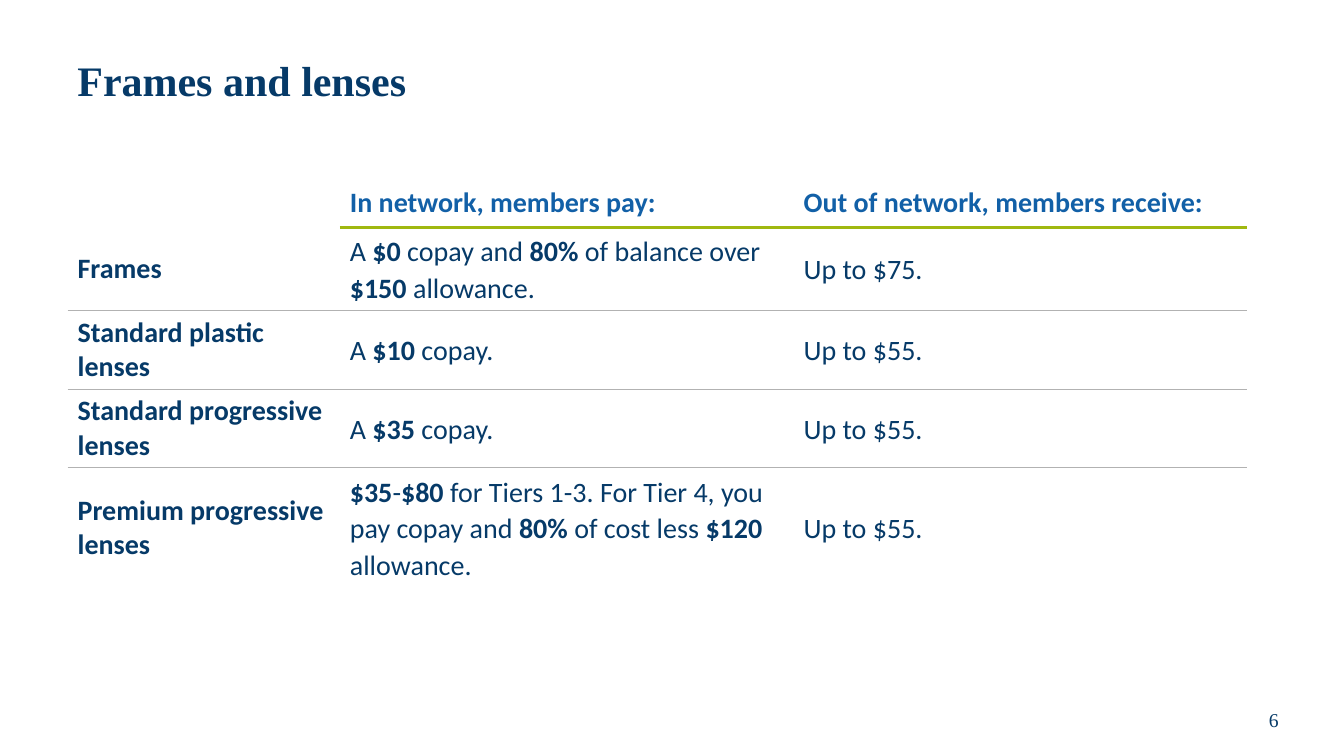
from lxml.etree import SubElement
from pptx import Presentation
from pptx.dml.color import RGBColor
from pptx.enum.text import MSO_ANCHOR, PP_ALIGN
from pptx.oxml.ns import qn
from pptx.util import Pt

PX = 9144
COLORS = {"navy": "063A68", "blue": "1260A7", "green": "A0B810", "gray": "B2B2B2"}
HEADER_RULE = ("green", 2.25)
ROW_RULE = ("gray", 0.5)
HEADERS = ["", "In network, members pay:", "Out of network, members receive:"]
BENEFITS = [
    ("Frames", "A **$0 **copay and **80%** of balance over **$150 **allowance.", "Up to $75."),
    ("Standard plastic lenses", "A **$10** copay.", "Up to $55."),
    ("Standard progressive lenses", "A **$35** copay.", "Up to $55."),
    ("Premium progressive lenses",
     "**$35**-**$80** for Tiers 1-3. For Tier 4, you pay copay and **80% **of cost less "
     "**$120 **allowance.", "Up to $55."),
]
COLUMN_WIDTHS = [270, 450, 450]
ROW_HEIGHTS = [50, 82, 78, 78, 120]


class SlideBuilder:
    """Adds styled text and tables to one slide, measured in px."""

    def __init__(self, deck):
        self.slide = deck.slides.add_slide(deck.slide_layouts[6])

    def style(self, paragraph, size, font, color, bold=None, spacing=None):
        paragraph.font.size = Pt(size)
        paragraph.font.name = font
        paragraph.font.color.rgb = RGBColor.from_string(COLORS[color])
        paragraph.font.bold = bold
        paragraph.line_spacing = spacing

    def text(self, left, top, width, height, content, size, align=PP_ALIGN.LEFT, **look):
        box = self.slide.shapes.add_textbox(*(v * PX for v in (left, top, width, height)))
        frame = box.text_frame
        frame.word_wrap = True
        frame.vertical_anchor = MSO_ANCHOR.MIDDLE
        paragraph = frame.paragraphs[0]
        paragraph.text = content
        paragraph.alignment = align
        self.style(paragraph, size, "Times New Roman", "navy", **look)

    def borders(self, cell, top, bottom):
        properties = cell._tc.get_or_add_tcPr()
        for tag, rule in (("lnL", None), ("lnR", None), ("lnT", top), ("lnB", bottom)):
            line = SubElement(properties, qn(f"a:{tag}"))
            if rule:
                color, points = rule
                line.set("w", str(Pt(points)))
                fill = SubElement(line, qn("a:solidFill"))
                SubElement(fill, qn("a:srgbClr"), val=COLORS[color])
            else:
                SubElement(line, qn("a:noFill"))

    def cell(self, cell, content, color, bold, spacing, top, bottom):
        self.borders(cell, top, bottom)
        cell.fill.background()
        cell.vertical_anchor = MSO_ANCHOR.MIDDLE
        paragraph = cell.text_frame.paragraphs[0]
        for index, part in enumerate(content.split("**")):
            if part:
                span = paragraph.add_run()
                span.text = part
                if index % 2:
                    span.font.bold = True
        self.style(paragraph, 20, "Calibri", color, bold, spacing)

    def table(self, left, top, widths, heights, rows):
        table = self.slide.shapes.add_table(
            len(rows), len(widths), left * PX, top * PX, sum(widths) * PX, sum(heights) * PX
        ).table
        table.first_row = table.horz_banding = False
        for column, width in zip(table.columns, widths):
            column.width = width * PX
        for row, height in zip(table.rows, heights):
            row.height = height * PX
        last = len(rows) - 1
        for r, row in enumerate(rows):
            for c, content in enumerate(row):
                header_rule = HEADER_RULE if c else None
                above = None if r == 0 else header_rule if r == 1 else ROW_RULE
                below = header_rule if r == 0 else None if r == last else ROW_RULE
                is_label = r == 0 or c == 0
                self.cell(table.cell(r, c), content, "navy" if r else "blue", is_label,
                          None if is_label else 1.07, above, below)


def main():
    deck = Presentation()
    deck.slide_width, deck.slide_height = 1333 * PX, 750 * PX
    page = SlideBuilder(deck)
    page.text(1205, 689, 117, 50, "6", 14, PP_ALIGN.CENTER)
    page.text(67, 25, 1200, 115, "Frames and lenses", 30, bold=True, spacing=0.9)
    page.table(67, 176, COLUMN_WIDTHS, ROW_HEIGHTS, [HEADERS, *BENEFITS])
    deck.save("out.pptx")


if __name__ == "__main__":
    main()
